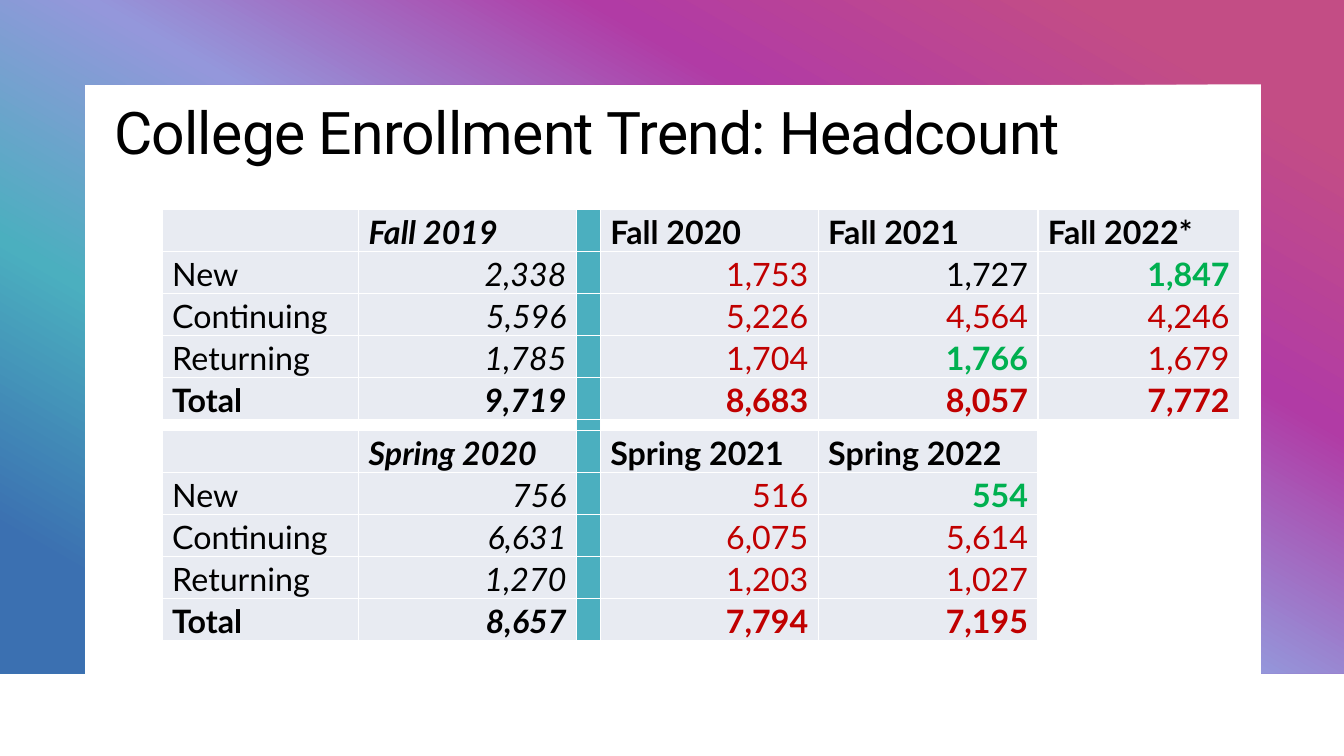
from dataclasses import dataclass

from lxml.etree import SubElement as Sub
from pptx import Presentation
from pptx.dml.color import RGBColor as Rgb
from pptx.enum.text import MSO_ANCHOR as Anchor, PP_ALIGN as Align
from pptx.oxml.ns import qn
from pptx.slide import Slide
from pptx.table import Table, _Cell as Cell
from pptx.util import Cm, Pt

HUES = {"black": "000000", "red": "C00000", "green": "00B050",
        "pale": "E8EBF2", "teal": "4BAFBF", "white": "FFFFFF"}
STOPS = {10: "C34D85", 30: "B13BA5", 50: "9497DB", 70: "4BAFBF", 90: "3B70B1"}
TONES = {"k": "black", "r": "red", "g": "green"}
WIDTHS = (4.95, 5.49, 0.58, 5.49, 5.54, 5.08)
ROW, GAP = 1.06, 0.27
BASE, BAR = 1, 2


@dataclass
class Line:
    """A table row, with one tone letter for each value."""
    label: str
    vals: tuple[str, ...]
    tones: str = "kkkk"


FALL = (
    Line("", ("Fall 2019", "Fall 2020", "Fall 2021", "Fall 2022*")),
    Line("New", ("2,338", "1,753", "1,727", "1,847"), "krkg"),
    Line("Continuing", ("5,596", "5,226", "4,564", "4,246"), "krrr"),
    Line("Returning", ("1,785", "1,704", "1,766", "1,679"), "krgr"),
    Line("Total", ("9,719", "8,683", "8,057", "7,772"), "krrr"),
)
SPRING = (
    Line("", ("Spring 2020", "Spring 2021", "Spring 2022")),
    Line("New", ("756", "516", "554"), "krg"),
    Line("Continuing", ("6,631", "6,075", "5,614"), "krr"),
    Line("Returning", ("1,270", "1,203", "1,027"), "krr"),
    Line("Total", ("8,657", "7,794", "7,195"), "krr"),
)


def add_frame(slide: Slide) -> None:
    """Draw the gradient frame behind the title."""
    edge = [(0, 0), (33.87, 0), (33.87, 16.97), (31.78, 16.97),
            (31.78, 2.13), (2.13, 2.13), (2.13, 16.97), (0, 16.97)]
    pts = [(Cm(x), Cm(y)) for x, y in edge]
    pen = slide.shapes.build_freeform(*pts[0])
    pen.add_line_segments(pts[1:], close=True)
    frame = pen.convert_to_shape()
    frame.shadow.inherit = False
    frame.line.fill.background()
    frame.fill.gradient()
    frame.fill.gradient_angle = 240
    stops = frame.element.spPr.find(f".//{qn('a:gsLst')}")
    for old in list(stops):
        stops.remove(old)
    for pos, hue in STOPS.items():
        stop = Sub(stops, qn("a:gs"), pos=str(pos * 1000))
        Sub(stop, qn("a:srgbClr"), val=hue)
    slide.shapes.title.element.addprevious(frame.element)


def add_title(slide: Slide) -> None:
    """Place and format the title."""
    title = slide.shapes.title
    title.left, title.top = Cm(2.62), Cm(2.39)
    title.width, title.height = Cm(27.61), Cm(1.98)
    frame = title.text_frame
    frame.text = "College Enrollment Trend: Headcount"
    frame.vertical_anchor = Anchor.MIDDLE
    para = frame.paragraphs[0]
    para.alignment, para.line_spacing = Align.LEFT, 0.95
    run = para.runs[0]
    run.font.name, run.font.size = "Roboto", Pt(42)
    run.font.color.rgb = Rgb.from_string(HUES["black"])
    run.font._element.set("spc", "-50")


def paint(cell: Cell, hue: str) -> None:
    """Fill a cell and keep its empty text small."""
    cell.fill.solid()
    cell.fill.fore_color.rgb = Rgb.from_string(HUES[hue])
    cell.margin_left = cell.margin_right = Cm(0.25)
    cell.margin_top, cell.margin_bottom = Cm(0.05), 0
    cell.vertical_anchor = Anchor.MIDDLE
    Sub(cell.text_frame.paragraphs[0]._p, qn("a:endParaRPr"), sz="100")


def write(cell: Cell, text: str, tone: str, bold: bool, slant: bool, right: bool) -> None:
    """Write one formatted entry into a cell."""
    para = cell.text_frame.paragraphs[0]
    para.text = text
    para.alignment = Align.RIGHT if right else Align.LEFT
    for run in para.runs:
        font = run.font
        font.name, font.size = "Lato", Pt(23)
        font.bold, font.italic = bold, slant
        font.color.rgb = Rgb.from_string(HUES[TONES[tone]])


def add_term(table: Table, top: int, lines: tuple[Line, ...]) -> None:
    """Write one term's block from the given row down."""
    for row, line in enumerate(lines, top):
        head, total = not line.label, line.label == "Total"
        label = table.cell(row, 0)
        paint(label, "pale")
        if line.label:
            write(label, line.label, "k", total, False, False)
        for num, (val, tone) in enumerate(zip(line.vals, line.tones)):
            cell = table.cell(row, num + BASE + (num > 0))
            paint(cell, "pale")
            bold = head or total or tone == "g"
            write(cell, val, tone, bold, num == 0, not head)
            if num == len(line.vals) - 1 and not (head or total):
                cell.vertical_anchor = Anchor.BOTTOM


def add_grid(slide: Slide) -> None:
    """Build the table of both terms with its divider column."""
    split = len(FALL)
    count = split + 1 + len(SPRING)
    table = slide.shapes.add_table(
        count, len(WIDTHS), Cm(4.09), Cm(5.28), Cm(sum(WIDTHS)),
        Cm(ROW * (count - 1) + GAP)).table
    table.first_row = table.horz_banding = False
    for col, width in zip(table.columns, WIDTHS):
        col.width = Cm(width)
    for num, row in enumerate(table.rows):
        row.height = Cm(GAP if num == split else ROW)
        paint(table.cell(num, BAR), "teal")
    for col in range(len(WIDTHS)):
        if col != BAR:
            paint(table.cell(split, col), "white")
    for row in range(split + 1, count):
        paint(table.cell(row, len(WIDTHS) - 1), "white")
    add_term(table, 0, FALL)
    add_term(table, split + 1, SPRING)


def main() -> None:
    """Build and save the slide."""
    deck = Presentation()
    deck.slide_width, deck.slide_height = Cm(33.87), Cm(19.05)
    slide = deck.slides.add_slide(deck.slide_layouts[5])
    add_frame(slide)
    add_title(slide)
    add_grid(slide)
    deck.save("out.pptx")


if __name__ == "__main__":
    main()
